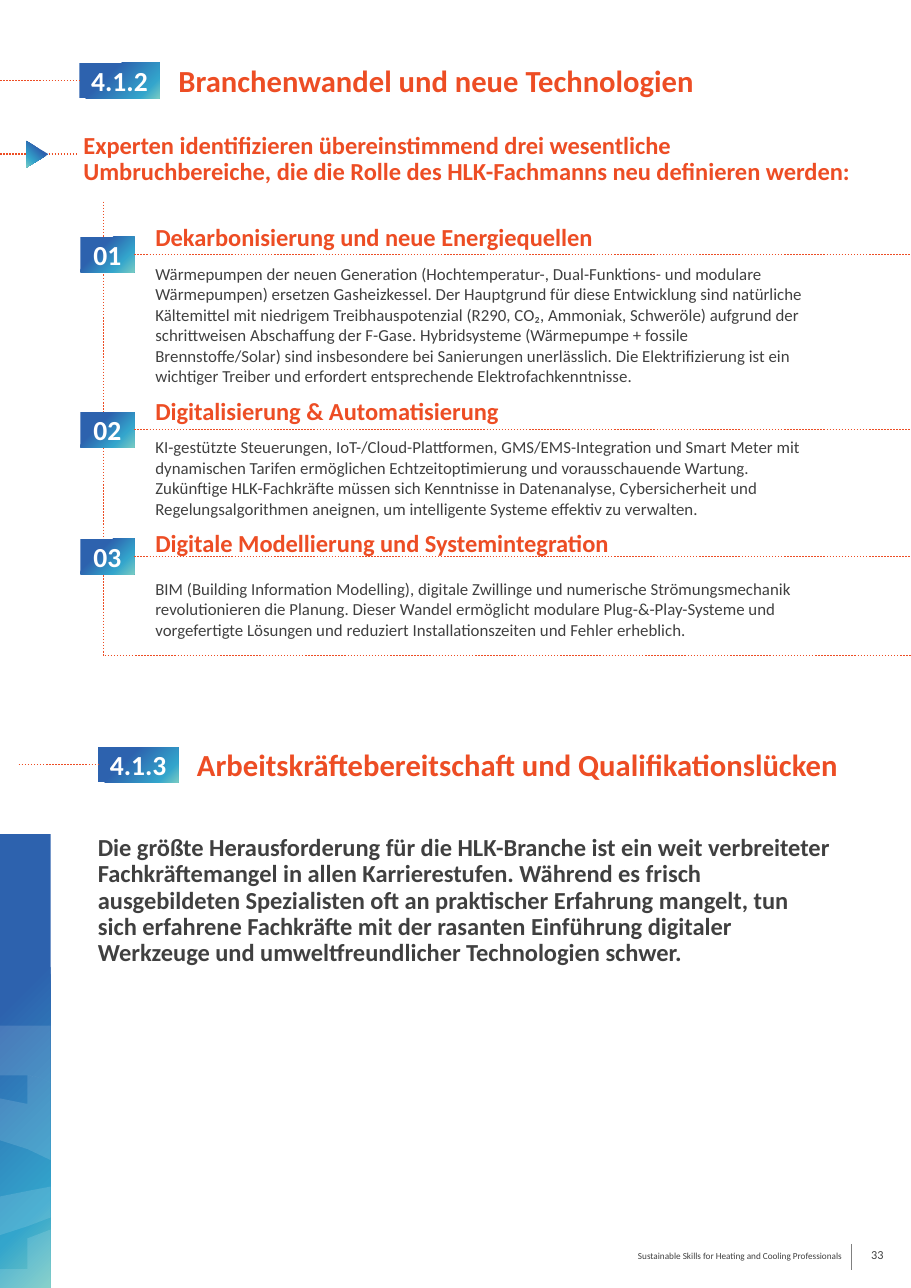
from copy import deepcopy

from lxml.etree import SubElement
from pptx import Presentation
from pptx.dml.color import RGBColor
from pptx.enum.dml import MSO_LINE
from pptx.enum.shapes import MSO_CONNECTOR, MSO_SHAPE
from pptx.enum.text import MSO_ANCHOR, MSO_AUTO_SIZE, PP_ALIGN
from pptx.oxml.ns import qn
from pptx.util import Pt

PX = 9144  # EMU per px, 100 px to the inch
PAGE_WIDTH, PAGE_HEIGHT = 827, 1169
COLORS = {
    "accent": "ED4D24",
    "text": "404040",
    "white": "FFFFFF",
    "rule": "808080",
    "deep": "2D62AE",
    "sky": "33A5CC",
    "mint": "77CBC4",
}

deck = Presentation()
deck.slide_width, deck.slide_height = PAGE_WIDTH * PX, PAGE_HEIGHT * PX
page = deck.slides.add_slide(deck.slide_layouts[1])
shapes = page.shapes


def write(frame, text, size=16, color="accent", bold=True, align=PP_ALIGN.LEFT,
          anchor=MSO_ANCHOR.TOP, leading=None, before=0, plain_list=False):
    """Fill the frame's empty first paragraph, or add a paragraph after its text."""
    frame.word_wrap = True
    frame.auto_size = MSO_AUTO_SIZE.NONE
    frame.vertical_anchor = anchor
    paragraph = frame.add_paragraph() if frame.text else frame.paragraphs[0]
    if plain_list:
        properties = paragraph._p.get_or_add_pPr()
        properties.set("marL", "0")
        properties.set("indent", "0")
        SubElement(properties, qn("a:buNone"))
    paragraph.alignment = align
    paragraph.space_before = Pt(before)
    if leading:
        paragraph.line_spacing = Pt(leading)
    run = paragraph.add_run()
    run.text = text
    run.font.name = "Calibri"
    run.font.size = Pt(size)
    run.font.bold = bold
    run.font.color.rgb = RGBColor.from_string(COLORS[color])


def draw_line(x1, y1, x2, y2, color="accent", width=1, dash=MSO_LINE.ROUND_DOT):
    line = shapes.add_connector(MSO_CONNECTOR.STRAIGHT, x1 * PX, y1 * PX, x2 * PX, y2 * PX)
    line.line.color.rgb = RGBColor.from_string(COLORS[color])
    line.line.width = Pt(width)
    line.line.dash_style = dash
    SubElement(line._element.spPr, qn("a:effectLst"))
    return line


# Section title and the three areas of change
title = shapes.title
title.left, title.top, title.width, title.height = (n * PX for n in (152, 55, 553, 40))
write(title.text_frame, "Branchenwandel und neue Technologien", size=20, leading=21)

AREAS = [
    ("Dekarbonisierung und neue Energiequellen", 7.3,
     "Wärmepumpen der neuen Generation (Hochtemperatur-, Dual-Funktions- und modulare Wärmepumpen) "
     "ersetzen Gasheizkessel. Der Hauptgrund für diese Entwicklung sind natürliche Kältemittel mit "
     "niedrigem Treibhauspotenzial (R290, CO₂, Ammoniak, Schweröle) aufgrund der schrittweisen "
     "Abschaffung der F-Gase. Hybridsysteme (Wärmepumpe + fossile Brennstoffe/Solar) sind "
     "insbesondere bei Sanierungen unerlässlich. Die Elektrifizierung ist ein wichtiger Treiber "
     "und erfordert entsprechende Elektrofachkenntnisse."),
    ("Digitalisierung & Automatisierung", 7.3,
     "KI-gestützte Steuerungen, IoT-/Cloud-Plattformen, GMS/EMS-Integration und Smart Meter mit "
     "dynamischen Tarifen ermöglichen Echtzeitoptimierung und vorausschauende Wartung. Zukünftige "
     "HLK-Fachkräfte müssen sich Kenntnisse in Datenanalyse, Cybersicherheit und "
     "Regelungsalgorithmen aneignen, um intelligente Systeme effektiv zu verwalten."),
    ("Digitale Modellierung und Systemintegration", 13.4,
     "BIM (Building Information Modelling), digitale Zwillinge und numerische Strömungsmechanik "
     "revolutionieren die Planung. Dieser Wandel ermöglicht modulare Plug-&-Play-Systeme und "
     "vorgefertigte Lösungen und reduziert Installationszeiten und Fehler erheblich."),
]
areas = page.placeholders[1]
areas.left, areas.top, areas.width, areas.height = (n * PX for n in (131, 205, 621, 374))
for index, (heading, gap, description) in enumerate(AREAS):
    write(areas.text_frame, heading, leading=13.4, before=12.2 if index else 0, plain_list=True)
    write(areas.text_frame, description, size=11, color="text", bold=False,
          leading=13.4, before=gap, plain_list=True)

# Remaining texts
TEXTS = [
    ((66, 116, 717, 82),
     "Experten identifizieren übereinstimmend drei wesentliche Umbruchbereiche, die die Rolle des "
     "HLK-Fachmanns neu definieren werden:", dict(leading=17)),
    ((169, 676, 607, 40), "Arbeitskräftebereitschaft und Qualifikationslücken",
     dict(size=20, leading=21)),
    ((79, 753, 685, 129),
     "Die größte Herausforderung für die HLK-Branche ist ein weit verbreiteter Fachkräftemangel in "
     "allen Karrierestufen. Während es frisch ausgebildeten Spezialisten oft an praktischer "
     "Erfahrung mangelt, tun sich erfahrene Fachkräfte mit der rasanten Einführung digitaler "
     "Werkzeuge und umweltfreundlicher Technologien schwer.", dict(color="text", leading=17.2)),
    ((242, 1130, 532, 20), "Sustainable Skills for Heating and Cooling Professionals",
     dict(size=6, color="text", bold=False, align=PP_ALIGN.RIGHT)),
    ((774, 1124, 38, 30), "33",
     dict(size=8, color="text", bold=False, align=PP_ALIGN.RIGHT, anchor=MSO_ANCHOR.MIDDLE)),
]
for box, text, style in TEXTS:
    write(shapes.add_textbox(*(n * PX for n in box)).text_frame, text, **style)

# Lines that run behind the badges and the arrow
draw_line(0, 140, 70, 140)
draw_line(94, 183, 94, 595)
draw_line(95, 595, PAGE_WIDTH, 595)
draw_line(773, 1129, 773, 1153, color="rule", width=0.75, dash=MSO_LINE.SOLID)

# Gradient shapes: kind, box, position of the middle stop, label, far x of the joined line
GRADIENTS = [
    (MSO_SHAPE.RECTANGLE, (72, 57, 73, 32), 0.82, "4.1.2", 0),
    (MSO_SHAPE.RECTANGLE, (89, 678, 73, 32), 0.82, "4.1.3", 17),
    (MSO_SHAPE.RECTANGLE, (73, 215, 49, 32), 0.74, "01", PAGE_WIDTH),
    (MSO_SHAPE.RECTANGLE, (73, 374, 49, 32), 0.74, "02", PAGE_WIDTH),
    (MSO_SHAPE.RECTANGLE, (73, 489, 49, 32), 0.74, "03", PAGE_WIDTH),
    (MSO_SHAPE.ISOSCELES_TRIANGLE, (22, 130, 24, 20), 0.74, None, None),
    (MSO_SHAPE.RECTANGLE, (0, 757, 46, 412), 0.82, None, None),
]
for kind, box, middle, label, far_x in GRADIENTS:
    shape = shapes.add_shape(kind, *(n * PX for n in box))
    shape.shadow.inherit = False
    shape.line.fill.background()
    shape.fill.gradient()
    shape.fill.gradient_angle = 315
    stop_list = shape._element.spPr.find(".//" + qn("a:gsLst"))
    stop_list.append(deepcopy(stop_list[-1]))
    stops = zip(shape.fill.gradient_stops, (0.35, middle, 1), ("deep", "sky", "mint"))
    for stop, position, color in stops:
        stop.position = position
        stop.color.rgb = RGBColor.from_string(COLORS[color])
    if kind == MSO_SHAPE.ISOSCELES_TRIANGLE:
        shape.rotation = 90
    if label:
        frame = shape.text_frame
        frame.margin_left = frame.margin_right = frame.margin_top = frame.margin_bottom = 0
        write(frame, label, size=18, color="white", align=PP_ALIGN.CENTER,
              anchor=MSO_ANCHOR.MIDDLE)
        left, top, width, height = box
        center_y = top + height // 2
        if far_x < left:
            draw_line(far_x, center_y, left, center_y).end_connect(shape, 1)
        else:
            draw_line(left + width, center_y, far_x, center_y).begin_connect(shape, 3)

# Translucent ornament on the side band
ORNAMENT = [
    [(0, 931), (46, 931), (46, 983), (36, 978), (25, 976), (0, 976)],
    [(0, 997), (25, 1002), (25, 976), (36, 978), (46, 983), (46, 1053), (25, 1043), (0, 1035)],
    [(0, 1086), (25, 1081), (46, 1077), (46, 1105), (25, 1113), (0, 1121)],
    [(0, 1152), (25, 1152), (25, 1124), (46, 1116), (46, 1169), (0, 1169)],
]
for start, *corners in ORNAMENT:
    builder = shapes.build_freeform(*start, scale=PX)
    builder.add_line_segments(corners, close=True)
    veil = builder.convert_to_shape()
    veil.shadow.inherit = False
    veil.line.fill.background()
    veil.fill.solid()
    veil.fill.fore_color.rgb = RGBColor.from_string(COLORS["white"])
    tint = veil._element.spPr.find(qn("a:solidFill")).find(qn("a:srgbClr"))
    SubElement(tint, qn("a:alpha"), val="13000")

deck.save("out.pptx")
